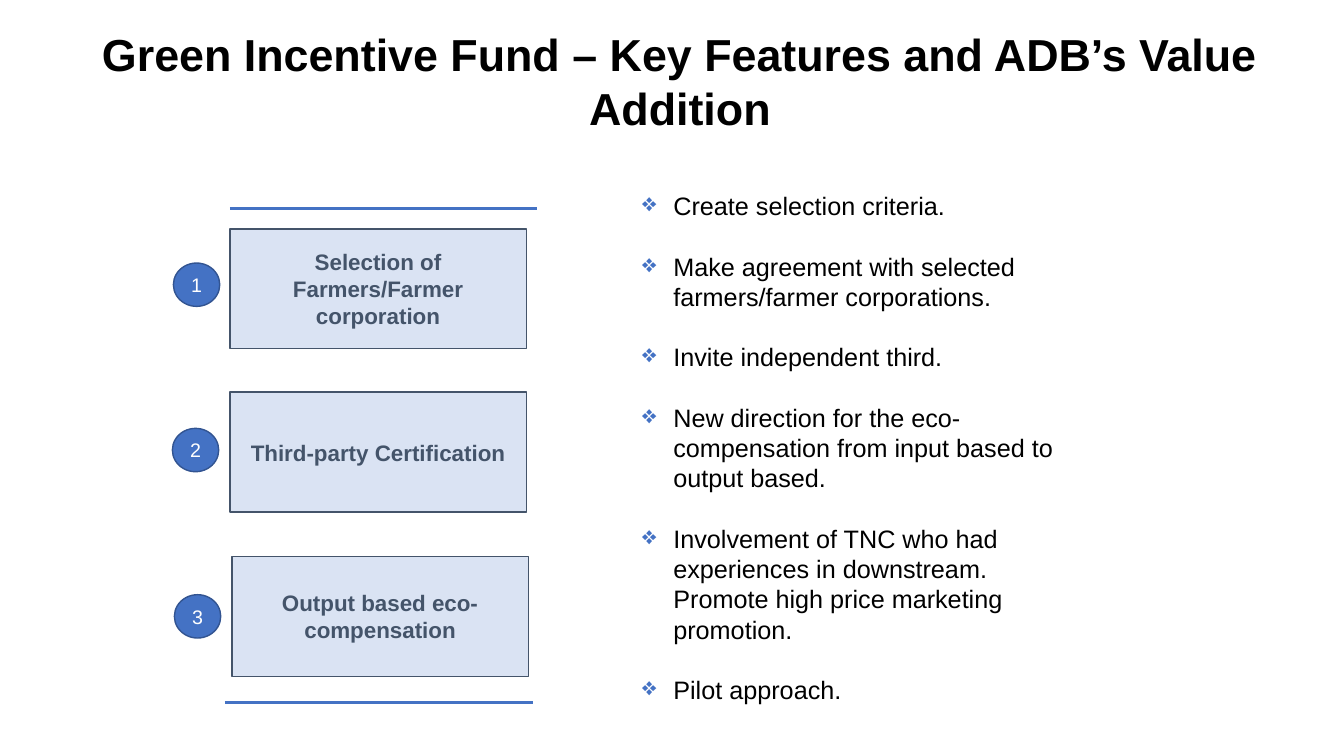
import pptx
import pptx.dml.color
import pptx.enum.shapes
import pptx.enum.text
import pptx.oxml.ns
import pptx.util
from lxml import etree

Inches = pptx.util.Inches
Pt = pptx.util.Pt
SHAPES = pptx.enum.shapes.MSO_SHAPE
CENTER = pptx.enum.text.PP_ALIGN.CENTER

TITLE = "Green Incentive Fund – Key Features and ADB’s Value Addition"
STEPS = [
    ("Selection of Farmers/Farmer corporation", 2.28, 2.27, 1.72, 2.61),
    ("Third-party Certification", 2.28, 3.89, 1.71, 4.25),
    ("Output based eco-compensation", 2.3, 5.52, 1.73, 5.9),
]
RULES = [(2.28, 5.33, 2.07), (2.23, 5.29, 6.97)]
FEATURES = [
    "Create selection criteria.",
    "Make agreement with selected farmers/farmer corporations.",
    "Invite independent third.",
    "New direction for the eco-compensation from input based to output based.",
    "Involvement of TNC who had experiences in downstream. "
    "Promote high price marketing promotion.",
    "Pilot approach.",
]
BLUE, BLACK, SLATE = "4472C4", "000000", "44546A"
FEATURE_LINE = Pt(21.6)


def color(hex_value):
    return pptx.dml.color.RGBColor.from_string(hex_value)


def style(paragraph, size, hex_value, bold=False):
    paragraph.font.name = "Arial"
    paragraph.font.size = Pt(size)
    paragraph.font.bold = bold
    paragraph.font.color.rgb = color(hex_value)


def add_text_frame(slide, left, top, width, height):
    box = slide.shapes.add_textbox(Inches(left), Inches(top), Inches(width), Inches(height))
    box.text_frame.word_wrap = True
    return box.text_frame


def add_label(slide, kind, bounds, text, size, text_color, fill, outline, bold=False):
    shape = slide.shapes.add_shape(kind, *map(Inches, bounds))
    shape.shadow.inherit = False
    shape.fill.solid()
    shape.fill.fore_color.rgb = color(fill)
    shape.line.color.rgb = color(outline)
    shape.line.width = Pt(1)
    shape.text_frame.word_wrap = True
    shape.text_frame.vertical_anchor = pptx.enum.text.MSO_ANCHOR.MIDDLE
    paragraph = shape.text_frame.paragraphs[0]
    paragraph.text = text
    paragraph.alignment = CENTER
    style(paragraph, size, text_color, bold)


def add_rule(slide, left, right, top):
    rule = slide.shapes.add_connector(
        pptx.enum.shapes.MSO_CONNECTOR.STRAIGHT,
        Inches(left), Inches(top), Inches(right), Inches(top))
    rule.line.color.rgb = color(BLUE)
    rule.line.width = Pt(2)
    etree.SubElement(rule._element.spPr, pptx.oxml.ns.qn("a:effectLst"))


def add_bullet(paragraph):
    qn = pptx.oxml.ns.qn
    properties = paragraph._p.get_or_add_pPr()
    properties.set("marL", str(Inches(0.31)))
    properties.set("indent", str(-Inches(0.31)))
    bullet_color = etree.SubElement(properties, qn("a:buClr"))
    etree.SubElement(bullet_color, qn("a:srgbClr"), val=BLUE)
    etree.SubElement(properties, qn("a:buChar"), char="❖")


def add_features(slide):
    frame = add_text_frame(slide, 6.27, 1.84, 4.61, 5.25)
    for index, text in enumerate(FEATURES):
        paragraph = frame.add_paragraph() if index else frame.paragraphs[0]
        paragraph.text = text
        add_bullet(paragraph)
        paragraph.line_spacing = FEATURE_LINE
        if index:
            paragraph.space_before = FEATURE_LINE
        style(paragraph, 18, BLACK)


def main():
    presentation = pptx.Presentation()
    presentation.slide_width = Inches(13.33)
    presentation.slide_height = Inches(7.5)
    slide = presentation.slides.add_slide(presentation.slide_layouts[6])

    title = add_text_frame(slide, 0.61, 0.22, 12.27, 1.18).paragraphs[0]
    title.text = TITLE
    title.alignment = CENTER
    style(title, 32, BLACK, True)

    add_features(slide)
    for number, (text, left, top, badge_left, badge_top) in enumerate(STEPS, 1):
        add_label(slide, SHAPES.RECTANGLE, (left, top, 2.94, 1.19),
                  text, 16, SLATE, "DAE3F3", SLATE, True)
        add_label(slide, SHAPES.OVAL, (badge_left, badge_top, 0.46, 0.43),
                  str(number), 14, "FFFFFF", BLUE, "325491")
    for rule in RULES:
        add_rule(slide, *rule)

    presentation.save("out.pptx")


if __name__ == "__main__":
    main()
